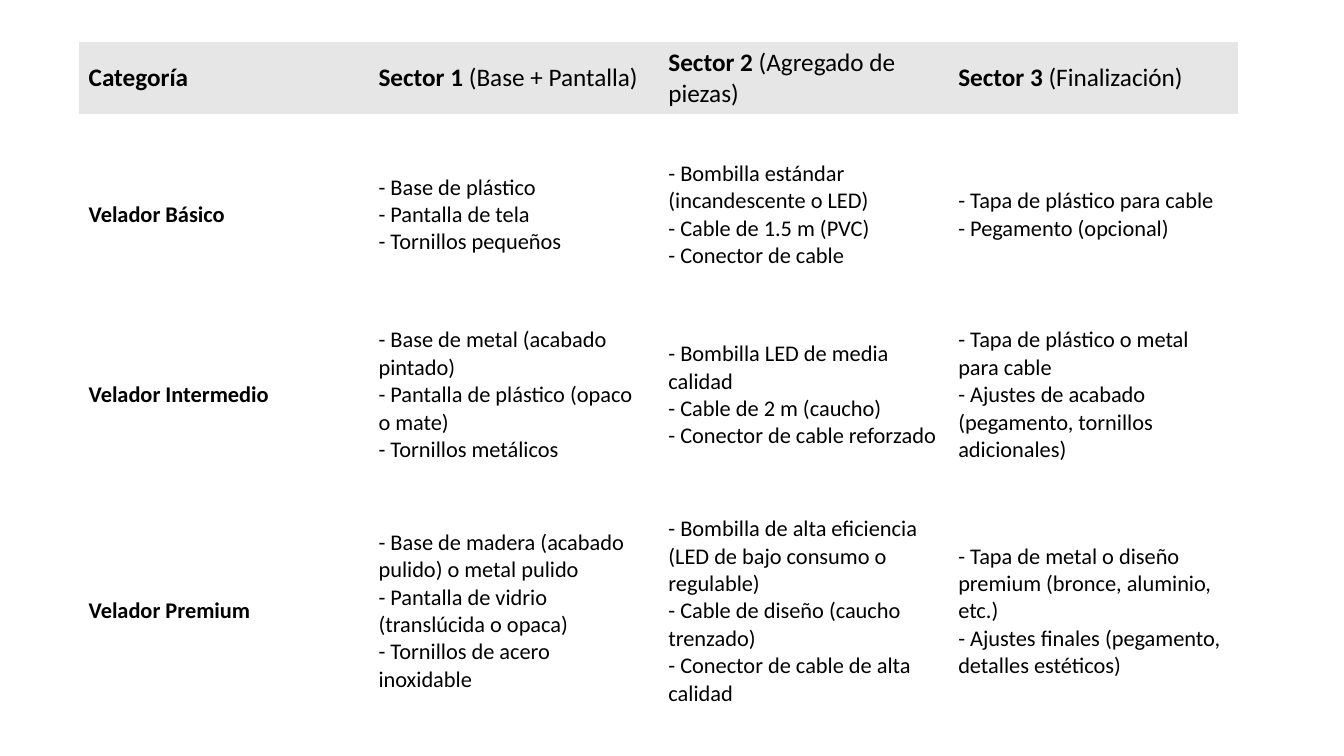
from pptx import Presentation
from pptx import util as u
from pptx.dml.color import RGBColor
from pptx.enum import text
from pptx.oxml.ns import qn

SLIDE_W, SLIDE_H = u.Inches(13.33), u.Inches(7.5)
COLS = 4
LEFT, WIDTH = 5.85, 86.27
COLORS = {"header": "E7E6E6", "text": "000000"}
PLAIN_STYLE = "{2D5ABB26-0587-4C30-8999-92F81FD0307C}"

HEADER = [
    ("Categoría", ""),
    ("Sector 1", " (Base + Pantalla)"),
    ("Sector 2", " (Agregado de piezas)"),
    ("Sector 3", " (Finalización)"),
]

CATEGORIES = [
    (20.5, 15.6, "Velador Básico", [
        ["Base de plástico", "Pantalla de tela", "Tornillos pequeños"],
        ["Bombilla estándar (incandescente o LED)", "Cable de 1.5 m (PVC)",
         "Conector de cable"],
        ["Tapa de plástico para cable", "Pegamento (opcional)"],
    ]),
    (41.33, 21.87, "Velador Intermedio", [
        ["Base de metal (acabado pintado)",
         "Pantalla de plástico (opaco o mate)", "Tornillos metálicos"],
        ["Bombilla LED de media calidad", "Cable de 2 m (caucho)",
         "Conector de cable reforzado"],
        ["Tapa de plástico o metal para cable",
         "Ajustes de acabado (pegamento, tornillos adicionales)"],
    ]),
    (67.5, 26.27, "Velador Premium", [
        ["Base de madera (acabado pulido) o metal pulido",
         "Pantalla de vidrio (translúcida o opaca)",
         "Tornillos de acero inoxidable"],
        ["Bombilla de alta eficiencia (LED de bajo consumo o regulable)",
         "Cable de diseño (caucho trenzado)",
         "Conector de cable de alta calidad"],
        ["Tapa de metal o diseño premium (bronce, aluminio, etc.)",
         "Ajustes finales (pegamento, detalles estéticos)"],
    ]),
]


def share_x(percent):
    return round(SLIDE_W * percent / 100)


def share_y(percent):
    return round(SLIDE_H * percent / 100)


def add_run(p, content, size, bold):
    r = p.add_run()
    r.text = content
    for name, value in {"name": "Calibri", "size": u.Pt(size), "bold": bold}.items():
        setattr(r.font, name, value)
    r.font.color.rgb = RGBColor.from_string(COLORS["text"])


def add_row_table(s, top, height):
    frame = s.shapes.add_table(1, COLS, share_x(LEFT), share_y(top),
                               share_x(WIDTH), share_y(height))
    table = frame.table
    for name in ("first_row", "horz_banding"):
        setattr(table, name, False)
    for style in frame.element.iter(qn("a:tableStyleId")):
        style.text = PLAIN_STYLE
    for cell in table.iter_cells():
        cell.vertical_anchor = text.MSO_ANCHOR.MIDDLE
        cell.fill.background()
    return list(table.iter_cells())


def add_header(s):
    for cell, (title, detail) in zip(add_row_table(s, 5.6, 9.39), HEADER):
        cell.fill.solid()
        cell.fill.fore_color.rgb = RGBColor.from_string(COLORS["header"])
        p = cell.text_frame.paragraphs[0]
        add_run(p, title, 18, True)
        if detail:
            add_run(p, detail, 18, False)


def add_category(s, top, height, name, sectors):
    name_cell, *sector_cells = add_row_table(s, top, height)
    add_run(name_cell.text_frame.paragraphs[0], name, 16, True)
    for cell, parts in zip(sector_cells, sectors):
        p = cell.text_frame.paragraphs[0]
        for i, part in enumerate(parts):
            if i:
                p.add_line_break()
            add_run(p, f"- {part}", 16, False)


def main():
    prs = Presentation()
    prs.slide_width, prs.slide_height = SLIDE_W, SLIDE_H
    s = prs.slides.add_slide(prs.slide_layouts[6])
    add_header(s)
    for category in CATEGORIES:
        add_category(s, *category)
    prs.save("out.pptx")


if __name__ == "__main__":
    main()
